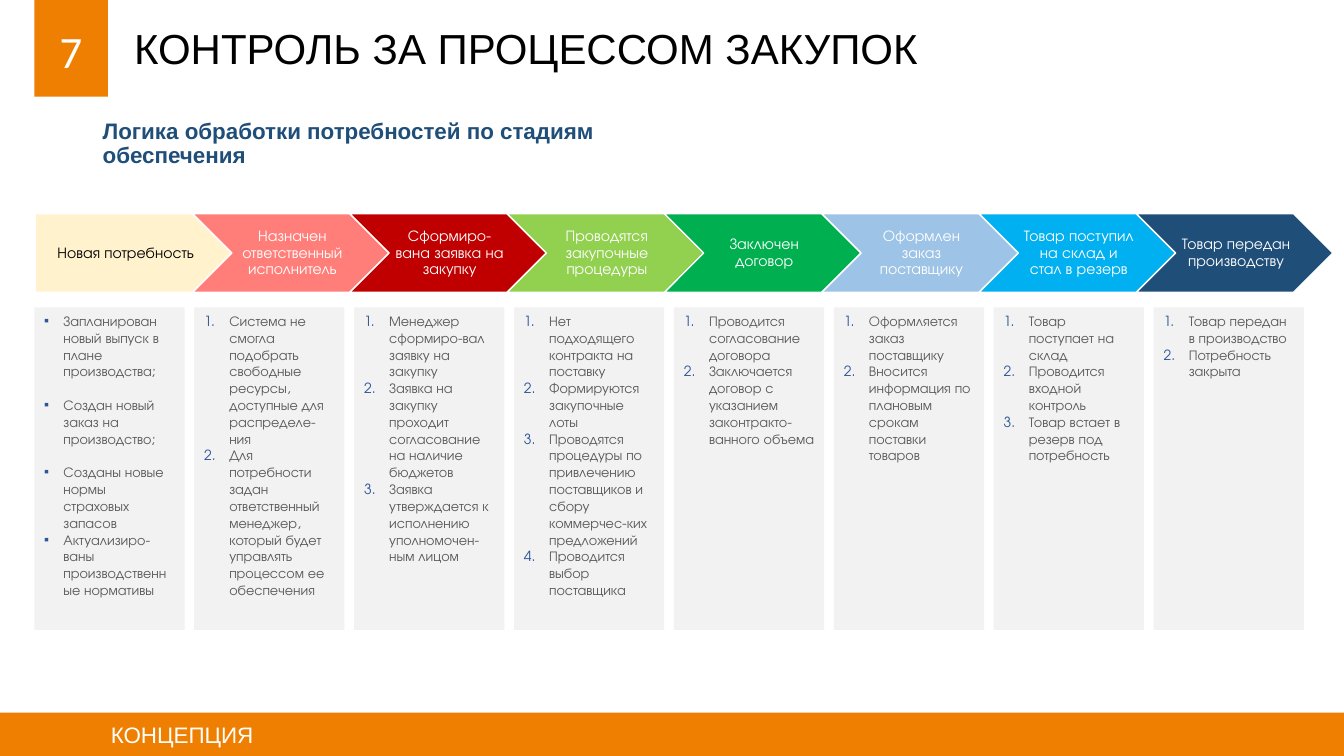
"""Build the slide on the stages of processing purchase needs."""
from lxml import etree
from pptx import Presentation
from pptx.dml.color import RGBColor
from pptx.enum.shapes import MSO_SHAPE
from pptx.enum.text import MSO_ANCHOR, PP_ALIGN
from pptx.oxml.ns import qn
from pptx.util import Inches, Pt

RECT, PENTAGON, CHEVRON = MSO_SHAPE.RECTANGLE, MSO_SHAPE.PENTAGON, MSO_SHAPE.CHEVRON
TOP, MIDDLE = MSO_ANCHOR.TOP, MSO_ANCHOR.MIDDLE
LEFT, CENTER = PP_ALIGN.LEFT, PP_ALIGN.CENTER

TITLE = "КОНТРОЛЬ ЗА ПРОЦЕССОМ ЗАКУПОК"
SUBTITLE = "Логика обработки потребностей по стадиям обеспечения"
NUMBER = "7"
FOOTER = "КОНЦЕПЦИЯ"
STAGES = [
    ("Новая потребность", "FFF2CC", [
        "Запланирован новый выпуск в плане производства;",
        "Создан новый заказ на производство;",
        "Созданы новые нормы страховых запасов",
        "Актуализиро-ваны производственные нормативы"]),
    ("Назначен ответственный исполнитель", "FF7E79", [
        "Система не смогла подобрать свободные ресурсы, доступные для распределе-ния",
        "Для потребности задан ответственный менеджер, который будет управлять "
        "процессом ее обеспечения"]),
    ("Сформиро-вана заявка на закупку", "C00000", [
        "Менеджер сформиро-вал заявку на закупку",
        "Заявка на закупку проходит согласование на наличие бюджетов",
        "Заявка утверждается к исполнению уполномочен-ным лицом"]),
    ("Проводятся закупочные процедуры", "92D050", [
        "Нет подходящего контракта на поставку",
        "Формируются закупочные лоты",
        "Проводятся процедуры по привлечению поставщиков и сбору "
        "коммерчес-ких предложений",
        "Проводится выбор поставщика"]),
    ("Заключен договор", "00B050", [
        "Проводится согласование договора",
        "Заключается договор с указанием законтракто-ванного объема"]),
    ("Оформлен заказ поставщику", "9DC3E6", [
        "Оформляется заказ поставщику",
        "Вносится информация по плановым срокам поставки товаров"]),
    ("Товар поступил на склад и стал в резерв", "00B0F0", [
        "Товар поступает на склад",
        "Проводится входной контроль",
        "Товар встает в резерв под потребность"]),
    ("Товар передан производству", "1F4E79", [
        "Товар передан в производство",
        "Потребность закрыта"]),
]

THEME = {
    "accent": "EF7F00", "card": "F2F2F2", "marker": "2F5597", "white": "FFFFFF",
    "title": dict(name="Arial", size=30, color="000000"),
    "subtitle": dict(name="Arial", size=16, color="1F4E79", bold=True),
    "number": dict(name="Calibri", size=32, color="FFFFFF"),
    "footer": dict(name="Arial", size=16, color="FFFFFF"),
    "first": dict(name="TeX Gyre Adventor", size=11, color="000000"),
    "stage": dict(name="TeX Gyre Adventor", size=11, color="FFFFFF"),
    "item": dict(name="TeX Gyre Adventor", size=10, color="595959"),
}

WIDTH, HEIGHT = 13.33, 7.5
MARGIN = 0.34
ARROW = dict(left=0.35, top=2.12, width=1.95, height=0.78, pitch=1.56)
CARD = dict(left=MARGIN, top=3.05, width=1.49, height=3.2, pitch=1.586)
FOOTER_HEIGHT = 0.43


def set_font(font, style):
    for key, value in style.items():
        if key == "color":
            font.color.rgb = RGBColor.from_string(value)
        else:
            setattr(font, key, Pt(value) if key == "size" else value)


def write(sp, lines, style, anchor=TOP, align=LEFT, spacing=1.0, **insets):
    tf = sp.text_frame
    tf.word_wrap, tf.vertical_anchor = True, anchor
    for side, value in insets.items():
        setattr(tf, f"margin_{side}", Inches(value))
    for i, line in enumerate(lines):
        p = tf.paragraphs[0] if i == 0 else tf.add_paragraph()
        p.alignment, p.line_spacing = align, spacing
        r = p.add_run()
        r.text = line
        set_font(r.font, THEME[style])
    return tf.paragraphs


def add_box(slide, kind, box, fill, line=None):
    sp = slide.shapes.add_shape(kind, *map(Inches, box))
    sp.shadow.inherit = False
    sp.fill.solid()
    sp.fill.fore_color.rgb = RGBColor.from_string(fill)
    if line:
        sp.line.color.rgb = RGBColor.from_string(line)
        sp.line.width = Pt(1)
    else:
        sp.line.fill.background()
    return sp


def add_marker(p, numbered):
    indent = Inches(0.25 if numbered else 0.19)
    pPr = p._p.get_or_add_pPr()
    pPr.set("marL", str(indent))
    pPr.set("indent", str(-indent))
    color = etree.SubElement(pPr, qn("a:buClr"))
    etree.SubElement(color, qn("a:srgbClr"), val=THEME["marker"])
    if numbered:
        etree.SubElement(pPr, qn("a:buFont"), typeface=THEME["item"]["name"])
        etree.SubElement(pPr, qn("a:buAutoNum"), type="arabicPeriod")
    else:
        etree.SubElement(pPr, qn("a:buFont"), typeface="Arial")
        etree.SubElement(pPr, qn("a:buChar"), char="▪")


def cell(grid, column):
    return (grid["left"] + column * grid["pitch"], grid["top"],
            grid["width"], grid["height"])


def add_header(slide):
    title = slide.shapes.title
    title.left, title.top, title.width, title.height = map(
        Inches, (1.23, 0.04, 11.64, 0.93))
    write(title, [TITLE], "title", MIDDLE, spacing=0.9)
    badge = add_box(slide, RECT, (MARGIN, 0, 0.73, 0.96), THEME["accent"])
    write(badge, [NUMBER], "number", MIDDLE, CENTER, top=0.09)
    sp = slide.shapes.add_textbox(*map(Inches, (0.92, 1.14, 6.3, 0.71)))
    write(sp, [SUBTITLE], "subtitle", spacing=0.9)


def add_stage(slide, column, name, color, items):
    first = column == 0
    arrow = add_box(slide, PENTAGON if first else CHEVRON, cell(ARROW, column),
                    color, THEME["white"])
    write(arrow, [name], "first" if first else "stage", MIDDLE, CENTER, 0.9,
          left=0.06 if first else 0.05, right=0.02, top=0.03, bottom=0.03)
    card = add_box(slide, RECT, cell(CARD, column), THEME["card"])
    for p in write(card, items, "item"):
        if p.text.endswith(";"):
            p.space_after = Pt(12)
        add_marker(p, numbered=not first)


def main():
    prs = Presentation()
    prs.slide_width, prs.slide_height = Inches(WIDTH), Inches(HEIGHT)
    slide = prs.slides.add_slide(prs.slide_layouts[5])
    add_header(slide)
    for column, stage in enumerate(STAGES):
        add_stage(slide, column, *stage)
    footer = add_box(slide, RECT, (0, HEIGHT - FOOTER_HEIGHT, WIDTH, FOOTER_HEIGHT),
                     THEME["accent"])
    write(footer, [FOOTER], "footer", MIDDLE, left=1.1)
    prs.save("out.pptx")


if __name__ == "__main__":
    main()
